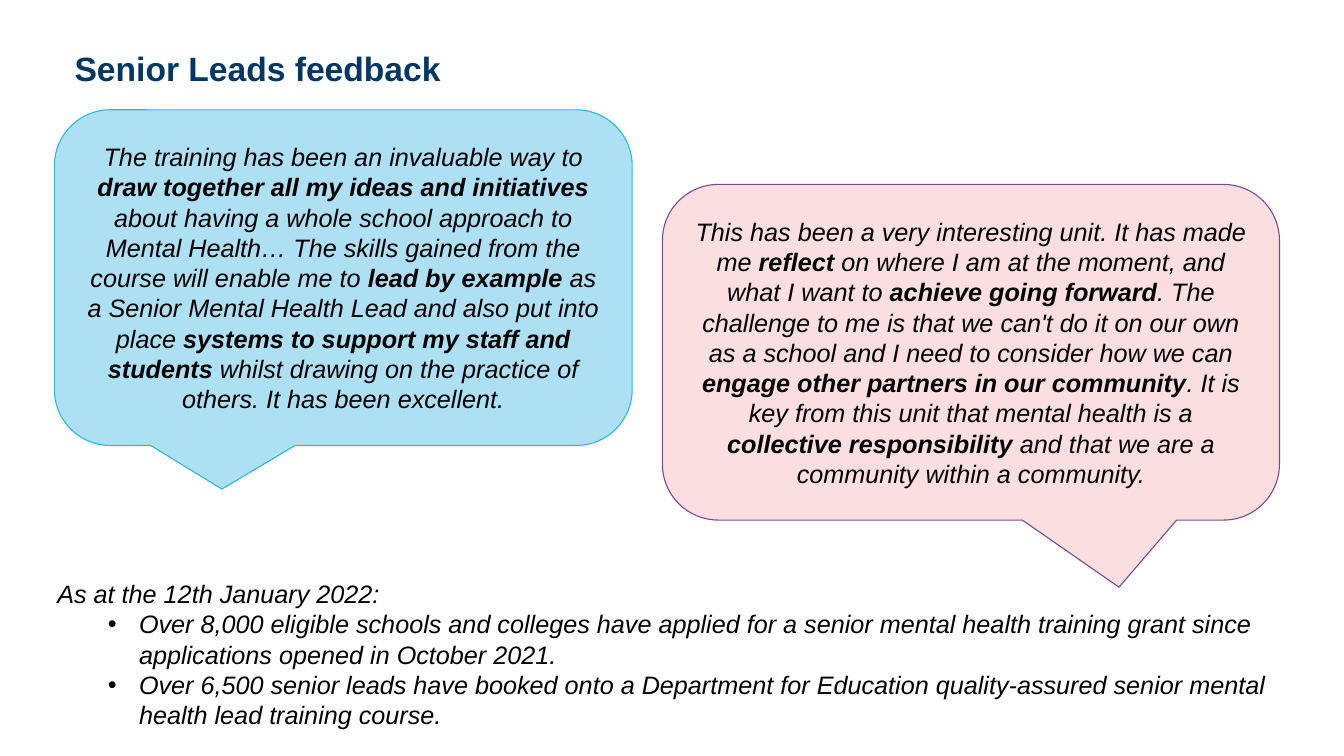
from dataclasses import dataclass

from lxml import etree
from pptx import Presentation
from pptx.dml.color import RGBColor
from pptx.enum.shapes import MSO_SHAPE
from pptx.enum.text import MSO_ANCHOR, MSO_AUTO_SIZE, PP_ALIGN
from pptx.oxml.ns import qn
from pptx.util import Inches, Pt

CALLOUT = MSO_SHAPE.ROUNDED_RECTANGULAR_CALLOUT
TOP, MIDDLE = MSO_ANCHOR.TOP, MSO_ANCHOR.MIDDLE
LEFT, CENTER = PP_ALIGN.LEFT, PP_ALIGN.CENTER
NO_AUTOFIT = MSO_AUTO_SIZE.NONE
TITLE_ONLY = 5


@dataclass(frozen=True)
class Theme:
    """Colours, font and type sizes of the slide."""
    font: str = "Arial"
    title_size: int = 24
    body_size: int = 18
    outline: float = 0.79
    navy: str = "003764"
    black: str = "000000"
    sky: str = "AEE0F3"
    teal: str = "2BBAD9"
    blush: str = "FBDEDF"
    purple: str = "774B99"


class FeedbackSlide:
    """Builds slide elements placed by percentages of the slide's size."""

    def __init__(self, deck, theme):
        self.deck = deck
        self.theme = theme
        self.slide = deck.slides.add_slide(deck.slide_layouts[TITLE_ONLY])

    def box(self, left, top, width, height):
        """Turn percentages into slide lengths."""
        across, down = self.deck.slide_width, self.deck.slide_height
        return (int(across * left / 100), int(down * top / 100),
                int(across * width / 100), int(down * height / 100))

    def add_run(self, paragraph, wording, size, color, bold=False, italic=False):
        """Add one styled run."""
        run = paragraph.add_run()
        run.text = wording
        font = run.font
        font.name, font.size = self.theme.font, Pt(size)
        font.bold, font.italic = bold, italic
        font.color.rgb = RGBColor.from_string(color)

    def add_body_run(self, paragraph, wording, bold=False):
        """Add one italic run in the body style."""
        self.add_run(paragraph, wording, self.theme.body_size,
                     self.theme.black, bold, italic=True)

    def title(self, wording, area):
        """Place and fill the title placeholder."""
        heading = self.slide.shapes.title
        heading.left, heading.top, heading.width, heading.height = self.box(*area)
        frame = heading.text_frame
        frame.margin_left = frame.margin_right = 0
        frame.margin_top = frame.margin_bottom = 0
        frame.vertical_anchor, frame.auto_size = TOP, NO_AUTOFIT
        paragraph = frame.paragraphs[0]
        paragraph.alignment, paragraph.line_spacing = LEFT, 0.9
        self.add_run(paragraph, wording, self.theme.title_size,
                     self.theme.navy, bold=True)

    def quote(self, phrases, area, tail, fill, line):
        """Add a speech bubble whose every second phrase is bold."""
        bubble = self.slide.shapes.add_shape(CALLOUT, *self.box(*area))
        bubble.shadow.inherit = False
        bubble.adjustments[0], bubble.adjustments[1] = tail
        bubble.fill.solid()
        bubble.fill.fore_color.rgb = RGBColor.from_string(fill)
        bubble.line.color.rgb = RGBColor.from_string(line)
        bubble.line.width = Pt(self.theme.outline)
        frame = bubble.text_frame
        frame.word_wrap, frame.vertical_anchor = True, MIDDLE
        paragraph = frame.paragraphs[0]
        paragraph.alignment = CENTER
        for order, phrase in enumerate(phrases):
            self.add_body_run(paragraph, phrase, bold=order % 2 == 1)

    def facts(self, intro, points, area):
        """Add an introductory line with bulleted points below it."""
        frame = self.slide.shapes.add_textbox(*self.box(*area)).text_frame
        frame.word_wrap = True
        self.add_body_run(frame.paragraphs[0], intro)
        for point in points:
            paragraph = frame.add_paragraph()
            paragraph.level = 1
            properties = paragraph._p.get_or_add_pPr()
            properties.set("marL", str(Inches(0.81)))
            properties.set("indent", str(Inches(-0.31)))
            etree.SubElement(properties, qn("a:buFont"), typeface=self.theme.font)
            etree.SubElement(properties, qn("a:buChar"), char="•")
            self.add_body_run(paragraph, point)


def main():
    """Build and save the feedback slide."""
    deck = Presentation()
    deck.slide_width, deck.slide_height = Inches(13.33), Inches(7.5)
    theme = Theme()
    feedback = FeedbackSlide(deck, theme)
    feedback.title("Senior Leads feedback", (5.55, 6.93, 87.47, 7.47))
    feedback.quote(
        ("The training has been an invaluable way to ",
         "draw together all my ideas and initiatives ",
         "about having a whole school approach to Mental Health… The skills "
         "gained from the course will enable me to ",
         "lead by example ",
         "as a Senior Mental Health Lead and also put into place ",
         "systems to support my staff and students",
         " whilst drawing on the practice of others. It has been excellent."),
        (4.05, 14.53, 42.99, 44.4), (-0.21, 0.63), theme.sky, theme.teal)
    feedback.quote(
        ("This has been a very interesting unit. It has made me ",
         "reflect",
         " on where I am at the moment, and what I want to ",
         "achieve going forward",
         ". The challenge to me is that we can't do it on our own as a school "
         "and I need to consider how we can ",
         "engage other partners in our community",
         ". It is key from this unit that mental health is a ",
         "collective responsibility ",
         "and that we are a community within a community."),
        (49.29, 24.4, 45.91, 44.4), (0.24, 0.7), theme.blush, theme.purple)
    feedback.facts(
        "As at the 12th January 2022:",
        ("Over 8,000 eligible schools and colleges have applied for a senior "
         "mental health training grant since applications opened in October 2021.",
         "Over 6,500 senior leads have booked onto a Department for Education "
         "quality-assured senior mental health lead training course."),
        (3.53, 75.87, 91.97, 21.6))
    deck.save("out.pptx")


if __name__ == "__main__":
    main()
